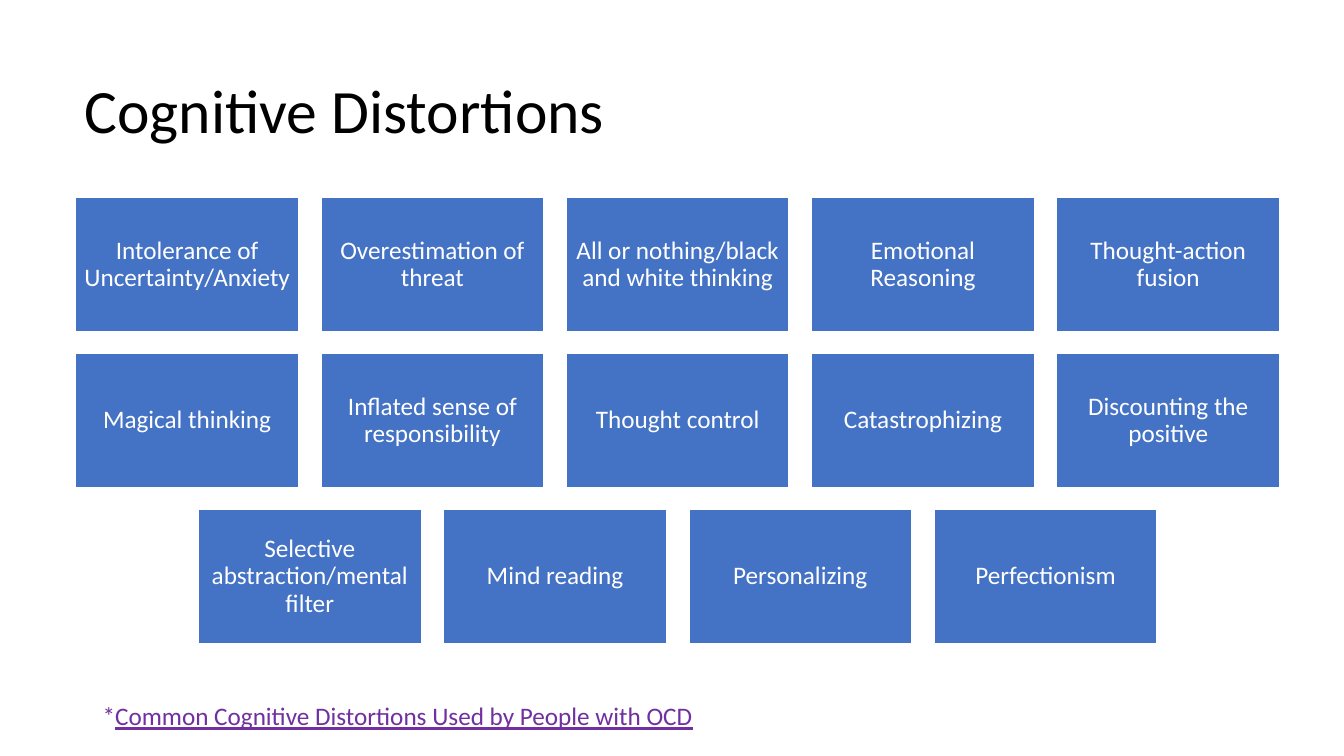
from pptx import Presentation
from pptx.dml.color import RGBColor
from pptx.enum.shapes import MSO_SHAPE
from pptx.enum.text import MSO_ANCHOR, MSO_AUTO_SIZE, PP_ALIGN
from pptx.util import Pt

RECT = MSO_SHAPE.RECTANGLE
MIDDLE = MSO_ANCHOR.MIDDLE
CENTER, LEFT = PP_ALIGN.CENTER, PP_ALIGN.LEFT
FIT_SHAPE, NO_FIT = MSO_AUTO_SIZE.SHAPE_TO_FIT_TEXT, MSO_AUTO_SIZE.NONE

FONT = "Calibri"
COLORS = {"black": "000000", "white": "FFFFFF", "blue": "4472C4", "purple": "7030A0"}

DISTORTIONS = [
    ["Intolerance of Uncertainty/Anxiety", "Overestimation of threat",
     "All or nothing/black and white thinking", "Emotional Reasoning",
     "Thought-action fusion"],
    ["Magical thinking", "Inflated sense of responsibility", "Thought control",
     "Catastrophizing", "Discounting the positive"],
    ["Selective abstraction/mental filter", "Mind reading", "Personalizing",
     "Perfectionism"],
]
GRID_CENTER, GRID_TOP = 484.1, 141.1
BOX_W, BOX_H, GAP = 159.3, 95.6, 15.9


def rgb(name):
    return RGBColor.from_string(COLORS[name])


def format_run(r, size, color, underline=None):
    r.font.name = FONT
    r.font.size = Pt(size)
    r.font.color.rgb = rgb(color)
    r.font.underline = underline


def add_title(slide, text):
    title = slide.shapes.title
    title.left, title.top, title.width, title.height = Pt(53.3), Pt(28.8), Pt(828), Pt(104.4)
    tf = title.text_frame
    tf.text = text
    tf.auto_size = NO_FIT
    tf.vertical_anchor = MIDDLE
    p = tf.paragraphs[0]
    p.alignment = LEFT
    p.line_spacing = 0.9
    format_run(p.runs[0], 44, "black")


def add_box(slide, text, left, top):
    sp = slide.shapes.add_shape(RECT, Pt(left), Pt(top), Pt(BOX_W), Pt(BOX_H))
    sp.shadow.inherit = False
    sp.fill.solid()
    sp.fill.fore_color.rgb = rgb("blue")
    sp.line.color.rgb = rgb("white")
    sp.line.width = Pt(1)
    tf = sp.text_frame
    tf.text = text
    tf.word_wrap = True
    tf.vertical_anchor = MIDDLE
    tf.margin_left = tf.margin_right = tf.margin_top = tf.margin_bottom = Pt(5.4)
    p = tf.paragraphs[0]
    p.alignment = CENTER
    p.line_spacing = 0.9
    format_run(p.runs[0], 18, "white")


def add_box_grid(slide, rows):
    """Lay out the rows of boxes, each row centred on the grid."""
    for i, row in enumerate(rows):
        row_width = len(row) * (BOX_W + GAP) - GAP
        left = GRID_CENTER - row_width / 2
        top = GRID_TOP + i * (BOX_H + GAP)
        for j, text in enumerate(row):
            add_box(slide, text, left + j * (BOX_W + GAP), top)


def add_footnote(slide, mark, text):
    sp = slide.shapes.add_textbox(Pt(66.2), Pt(496.8), Pt(504.7), Pt(29.1))
    tf = sp.text_frame
    tf.word_wrap = True
    tf.auto_size = FIT_SHAPE
    p = tf.paragraphs[0]
    for part, underline in ((mark, None), (text, True)):
        r = p.add_run()
        r.text = part
        format_run(r, 18, "purple", underline)


def main():
    prs = Presentation()
    prs.slide_width, prs.slide_height = Pt(960), Pt(540)
    slide = prs.slides.add_slide(prs.slide_layouts[5])
    add_title(slide, "Cognitive Distortions")
    add_footnote(slide, "*", "Common Cognitive Distortions Used by People with OCD")
    add_box_grid(slide, DISTORTIONS)
    prs.save("out.pptx")


if __name__ == "__main__":
    main()
